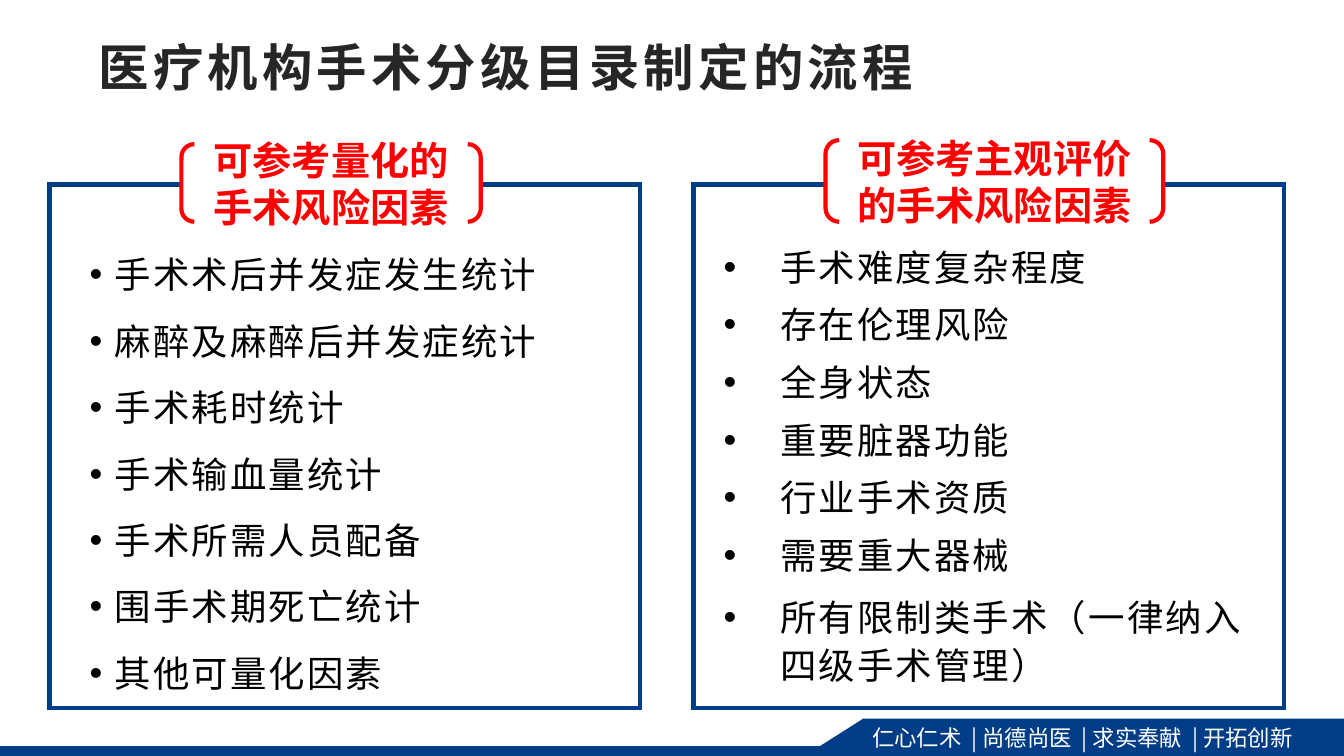
from pptx import Presentation, util as u
from pptx.dml.color import RGBColor
from pptx.enum import shapes, text
from pptx.oxml import parse_xml
from pptx.oxml.ns import nsdecls

BLUE, RED, WHITE, BLACK = "003D86", "FF0000", "FFFFFF", "000000"
SHAPE = shapes.MSO_SHAPE


def rgb(value):
    """Turn a hex string into a colour."""
    return RGBColor.from_string(value)


def style(font, size, color, bold=False, name="Arial"):
    """Set the face, size, colour and weight of a font."""
    font.name, font.size, font.bold = name, u.Pt(size), bold
    font.color.rgb = rgb(color)


def add_run(p, content, spacing=0):
    """Add a run with letter spacing in points."""
    r = p.add_run()
    r.text = content
    if spacing:
        r._r.get_or_add_rPr().set("spc", str(int(spacing * 100)))


def add_shape(s, kind, box, fill=None, line=None):
    """Add a flat preset shape with mitred corners."""
    sp = s.shapes.add_shape(kind, *map(u.Pt, box))
    sp.shadow.inherit = False
    if fill:
        sp.fill.solid()
        sp.fill.fore_color.rgb = rgb(fill)
    else:
        sp.fill.background()
    if line:
        sp.line.color.rgb = rgb(line)
        sp.line.width = u.Pt(3)
        sp.line._ln.append(parse_xml(f'<a:miter {nsdecls("a")} lim="800000"/>'))
    else:
        sp.line.fill.background()
    return sp


def add_text(s, box):
    """Add a wrapping text box and return its frame."""
    tf = s.shapes.add_textbox(*map(u.Pt, box)).text_frame
    tf.word_wrap = True
    return tf


def title(s, box, content):
    """Write the slide title."""
    tf = add_text(s, box)
    tf.vertical_anchor = text.MSO_ANCHOR.MIDDLE
    p = tf.paragraphs[0]
    add_run(p, content, 3)
    style(p.font, 36, "262626", True)


def footer(s, box, mottoes):
    """Draw the bottom band with its slanted tab and mottoes."""
    x, y, w, h = box
    tab_x, tab_w = x + w - 344, 344
    add_shape(s, SHAPE.RECTANGLE, (x, y + h - 7, w - 237, 7), BLUE)
    sp = add_shape(s, SHAPE.RIGHT_TRIANGLE, (tab_x - 33, y - 7.5, 26, 41), BLUE)
    sp.rotation = 270
    sp = add_shape(s, SHAPE.RECTANGLE, (tab_x, y, tab_w, h), BLUE)
    tf = sp.text_frame
    tf.word_wrap = True
    tf.margin_right = 0
    p = tf.paragraphs[0]
    p.alignment = text.PP_ALIGN.LEFT
    style(p.font, 16, WHITE, name="Noto Sans CJK JP")
    for i, motto in enumerate(mottoes):
        if i:
            add_run(p, " ", 3.5)
            add_run(p, "| ")
        add_run(p, motto)


def bullets(s, box, items, indent, spacings):
    """Write a bulleted list with a hanging indent."""
    tf = add_text(s, box)
    for i, (item, spacing) in enumerate(zip(items, spacings)):
        p = tf.add_paragraph() if i else tf.paragraphs[0]
        add_run(p, item, 1.5)
        style(p.font, 26, BLACK)
        p.line_spacing, p.space_after = spacing, u.Pt(10)
        pPr = p._p.get_or_add_pPr()
        pPr.set("marL", str(u.Pt(indent)))
        pPr.set("indent", str(-u.Pt(indent)))
        for tag in ('buFont {} typeface="Arial"', 'buChar {} char="•"'):
            bullet = parse_xml(f'<a:{tag.format(nsdecls("a"))}/>')
            pPr.insert_element_before(bullet, "a:tabLst", "a:defRPr", "a:extLst")


def panel(s, box, head, head_box, items, list_box, indent, spacings):
    """Draw a framed list with a bracketed heading on its top edge."""
    x, y, w, h = box
    add_shape(s, SHAPE.RECTANGLE, box, line=BLUE)
    dx, dy, hw, hh = head_box
    sp = add_shape(s, SHAPE.DOUBLE_BRACKET, (x + dx, y + dy, hw, hh), WHITE, RED)
    tf = sp.text_frame
    tf.word_wrap = True
    tf.vertical_anchor = text.MSO_ANCHOR.MIDDLE
    p = tf.paragraphs[0]
    p.alignment = text.PP_ALIGN.CENTER
    add_run(p, head)
    style(p.font, 28, RED, True)
    dx, dy, lw, lh = list_box
    bullets(s, (x + dx, y + dy, lw, lh), items, indent, spacings)


def main():
    """Build and save the slide."""
    prs = Presentation()
    prs.slide_width, prs.slide_height = u.Pt(960), u.Pt(540)
    s = prs.slides.add_slide(prs.slide_layouts[6])
    footer(s, (0, 513.4, 960, 26.6), ["仁心仁术", "尚德尚医", "求实奉献", "开拓创新"])
    title(s, (63.4, 19.4, 864, 55.4), "医疗机构手术分级目录制定的流程")
    measured = ["手术术后并发症发生统计", "麻醉及麻醉后并发症统计", "手术耗时统计",
                "手术输血量统计", "手术所需人员配备", "围手术期死亡统计", "其他可量化因素"]
    judged = ["手术难度复杂程度", "存在伦理风险", "全身状态", "重要脏器功能",
              "行业手术资质", "需要重大器械", "所有限制类手术（一律纳入四级手术管理）"]
    panel(s, (35.3, 131.8, 422, 373.7), "可参考量化的手术风险因素",
          (94.3, -28.8, 213.8, 55.4), measured, (21.6, 38.8, 388.8, 327), 18, [1.2] * 7)
    panel(s, (495.4, 131.8, 422, 373.7), "可参考主观评价的手术风险因素",
          (94.3, -31.7, 241.2, 58.3), judged, (14.4, 39.6, 393, 321), 40.5, [1] * 6 + [1.1])
    prs.save("out.pptx")


if __name__ == "__main__":
    main()
